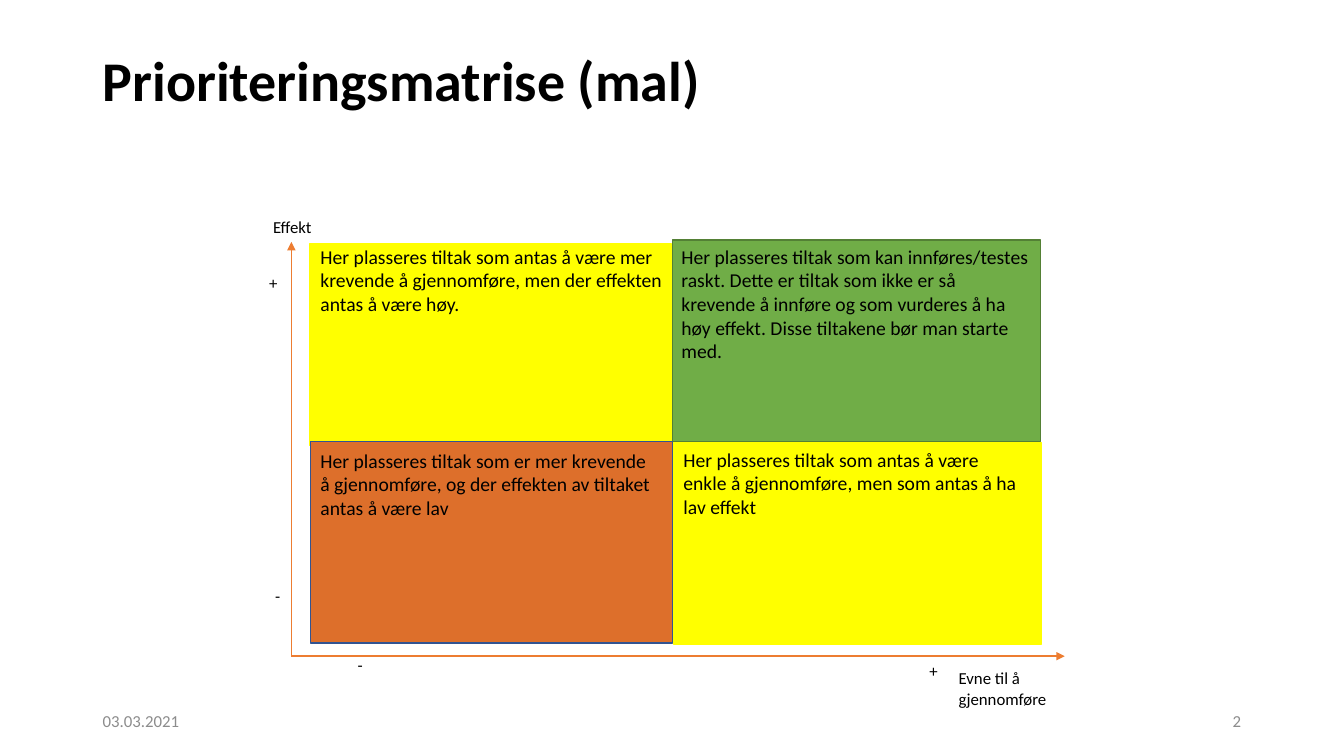
from lxml import etree
from pptx import Presentation
from pptx.dml.color import RGBColor
from pptx.enum.shapes import MSO_CONNECTOR, MSO_SHAPE
from pptx.enum.text import MSO_ANCHOR, MSO_AUTO_SIZE, PP_ALIGN
from pptx.oxml.ns import qn
from pptx.util import Inches, Pt

RECTANGLE = MSO_SHAPE.RECTANGLE
STRAIGHT = MSO_CONNECTOR.STRAIGHT
TOP, MIDDLE = MSO_ANCHOR.TOP, MSO_ANCHOR.MIDDLE
LEFT, RIGHT = PP_ALIGN.LEFT, PP_ALIGN.RIGHT
NO_AUTOFIT = MSO_AUTO_SIZE.NONE

SLIDE_WIDTH, SLIDE_HEIGHT = 13.33, 7.5
MARGIN = 0.92
FONT = "Calibri"
COLORS = {
    "text": "000000",
    "footer": "8C8C8C",
    "yellow": "FFFF00",
    "green": "70AD47",
    "green_line": "538035",
    "orange": "DD6F2B",
    "blue_line": "325491",
    "axis": "ED7D31",
}

COLUMN_WIDTHS = (3.59, 3.65)
ROW_HEIGHT = 2
# column, row, rectangle shift, text shift, text width, fill, line, wording
QUADRANTS = [
    (0, 0, (-0.01, 0.04), (0, 0), 3.59, "yellow", "yellow",
     "Her plasseres tiltak som antas å være mer krevende å gjennomføre, "
     "men der effekten antas å være høy."),
    (1, 0, (0, 0), (-0.01, 0), 3.65, "green", "green_line",
     "Her plasseres tiltak som kan innføres/testes raskt. Dette er tiltak som "
     "ikke er så krevende å innføre og som vurderes å ha høy effekt. "
     "Disse tiltakene bør man starte med."),
    (0, 1, (0, 0), (0, 0.02), 3.54, "orange", "blue_line",
     "Her plasseres tiltak som er mer krevende å gjennomføre, "
     "og der effekten av tiltaket antas å være lav"),
    (1, 1, (0.01, 0.01), (0.01, 0.01), 3.58, "yellow", "yellow",
     "Her plasseres tiltak som antas å være enkle å gjennomføre, "
     "men som antas å ha lav effekt"),
]


def color(name):
    return RGBColor.from_string(COLORS[name])


def format_text(shape, text, size, color_name="text", align=LEFT, anchor=TOP, bold=False):
    frame = shape.text_frame
    frame.text = text
    frame.word_wrap = True
    frame.auto_size = NO_AUTOFIT
    frame.vertical_anchor = anchor
    paragraph = frame.paragraphs[0]
    paragraph.alignment = align
    font = paragraph.runs[0].font
    font.name, font.size, font.bold = FONT, Pt(size), bold
    font.color.rgb = color(color_name)
    return paragraph


def add_text(slide, box, text, size, **style):
    shape = slide.shapes.add_textbox(*map(Inches, box))
    format_text(shape, text, size, **style)


def add_rectangle(slide, box, fill, line):
    shape = slide.shapes.add_shape(RECTANGLE, *map(Inches, box))
    shape.shadow.inherit = False
    shape.fill.solid()
    shape.fill.fore_color.rgb = color(fill)
    shape.line.color.rgb = color(line)
    shape.line.width = Pt(1)


def add_arrow(slide, start, end):
    arrow = slide.shapes.add_connector(STRAIGHT, *map(Inches, (*start, *end)))
    arrow.line.color.rgb = color("axis")
    arrow.line.width = Pt(1)
    etree.SubElement(arrow.line._get_or_add_ln(), qn("a:tailEnd"), type="triangle")
    etree.SubElement(arrow._element.spPr, qn("a:effectLst"))


def build_title(slide, box):
    title = slide.shapes.title
    title.left, title.top, title.width, title.height = map(Inches, box)
    paragraph = format_text(title, "Prioriteringsmatrise (mal)", 40, anchor=MIDDLE, bold=True)
    paragraph.line_spacing = 0.9


def build_matrix(slide, left, top):
    for column, row, shift, text_shift, text_width, fill, line, text in QUADRANTS:
        x = left + sum(COLUMN_WIDTHS[:column])
        y = top + row * ROW_HEIGHT
        width = COLUMN_WIDTHS[column]
        add_rectangle(slide, (x + shift[0], y + shift[1], width, ROW_HEIGHT), fill, line)
        add_text(slide, (x + text_shift[0], y + text_shift[1], text_width, ROW_HEIGHT / 2),
                 text, 14)


def build_axes(slide, left, top, width, height):
    bottom = top + height
    labels = [
        ("Effekt", left - 0.28, top - 0.3, 0.71, 0.3),
        ("+", left - 0.32, top + 0.26, 0.32, 0.3),
        ("-", left - 0.26, bottom - 0.75, 0.26, 0.3),
        ("-", left + 0.56, bottom - 0.06, 0.26, 0.3),
        ("+", left + 6.23, bottom, 0.32, 0.3),
        ("Evne til å gjennomføre", left + 6.52, bottom + 0.07, 1.3, 0.5),
    ]
    for text, *box in labels:
        add_text(slide, box, text, 12)
    add_arrow(slide, (left, bottom), (left, top))
    add_arrow(slide, (left, bottom), (left + width, bottom))


def build_footer(slide, top):
    width, height = 3, 0.4
    parts = [("03.03.2021", MARGIN, LEFT),
             ("2", SLIDE_WIDTH - MARGIN - width, RIGHT)]
    for text, left, align in parts:
        add_text(slide, (left, top, width, height), text, 12,
                 color_name="footer", align=align, anchor=MIDDLE)


def main():
    presentation = Presentation()
    presentation.slide_width = Inches(SLIDE_WIDTH)
    presentation.slide_height = Inches(SLIDE_HEIGHT)
    slide = presentation.slides.add_slide(presentation.slide_layouts[5])
    build_title(slide, (MARGIN, 0.4, SLIDE_WIDTH - 2 * MARGIN, 0.86))
    build_matrix(slide, 3.08, 2.38)
    build_axes(slide, 2.89, 2.4, 7.67, 4.11)
    build_footer(slide, 6.95)
    presentation.save("out.pptx")


if __name__ == "__main__":
    main()
